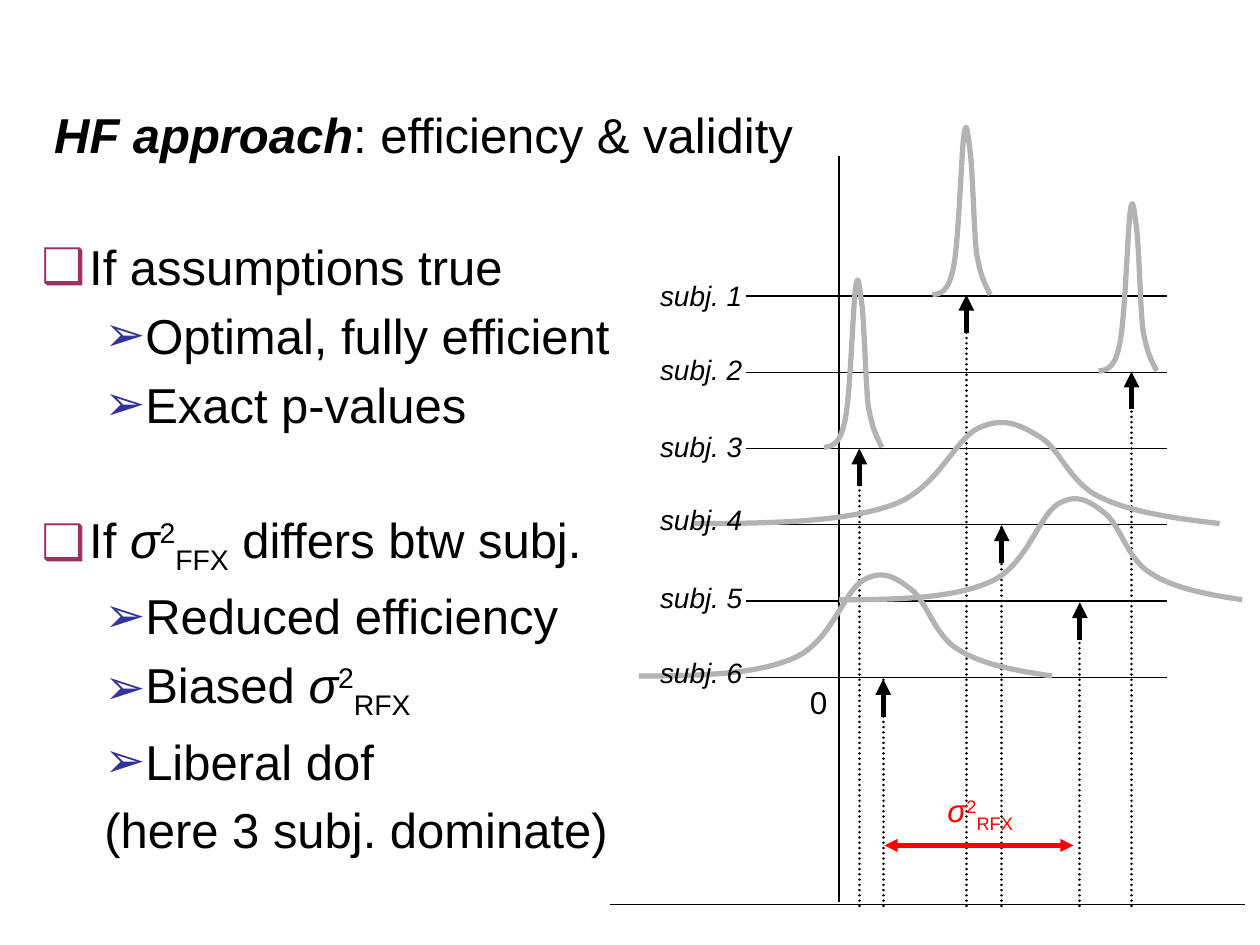
from dataclasses import dataclass
from typing import Optional

from lxml.etree import SubElement
from pptx import Presentation
from pptx.dml.color import RGBColor
from pptx.enum.dml import MSO_LINE
from pptx.enum.shapes import MSO_CONNECTOR
from pptx.enum.text import MSO_ANCHOR, PP_ALIGN
from pptx.oxml.ns import qn
from pptx.util import Inches, Pt

FONT = "Arial"
COLORS = {
    "text": "000000",
    "curve": "B3B3B3",
    "variance": "FF0000",
    "❑": "993366",
    "➢": "333399",
}

# Bezier points of the two densities: inches from the left end, height
NARROW = [
    (0, 0), (0.07, 0.01), (0.13, 0.02), (0.17, 0.23), (0.21, 0.44), (0.23, 1.11),
    (0.25, 1.26), (0.27, 1.41), (0.28, 1.29), (0.3, 1.14), (0.32, 0.99),
    (0.33, 0.53), (0.35, 0.34), (0.38, 0.15), (0.42, 0.08), (0.46, 0),
]
WIDE = [
    (0, 0), (0.59, 0), (1.18, 0.01), (1.56, 0.14), (1.94, 0.26), (2.07, 0.67),
    (2.27, 0.76), (2.47, 0.85), (2.6, 0.78), (2.75, 0.69), (2.91, 0.6),
    (2.99, 0.32), (3.23, 0.21), (3.47, 0.09), (3.83, 0.04), (4.18, 0),
]

FIRST_BASELINE, BASELINE_STEP = 2.35, 0.605
FIRST_ARROW, ARROW_STEP = 2.34, 0.61
AXIS_Y = 7.18


@dataclass
class Subject:
    name: str
    label_top: float
    estimate: float
    curve_left: float
    curve_width: float
    profile: list


@dataclass
class Piece:
    text: str
    bold: bool = False
    italic: bool = False
    baseline: int = 0


@dataclass
class BodyLine:
    pieces: list
    level: int = 1
    bullet: Optional[str] = "➢"
    space_before: float = 5.6


def sigma(subscript: str) -> list:
    return [Piece("σ", italic=True), Piece("2", baseline=30000),
            Piece(subscript, baseline=-25000)]


SUBJECTS = [
    Subject("subj. 1", 2.16, 7.67, 7.4, 0.46, NARROW),
    Subject("subj. 2", 2.75, 8.98, 8.72, 0.46, NARROW),
    Subject("subj. 3", 3.36, 6.82, 6.54, 0.46, NARROW),
    Subject("subj. 4", 3.94, 7.95, 5.5, 4.18, WIDE),
    Subject("subj. 5", 4.56, 8.57, 6.66, 3.2, WIDE),
    Subject("subj. 6", 5.15, 7.01, 5.07, 3.28, WIDE),
]
BODY = [
    BodyLine([Piece("If assumptions true")], 0, "❑", 0),
    BodyLine([Piece("Optimal, fully efficient")]),
    BodyLine([Piece("Exact p-values")]),
    BodyLine([Piece("If "), *sigma("FFX"), Piece(" differs btw subj.")], 0, "❑", 43.5),
    BodyLine([Piece("Reduced efficiency")]),
    BodyLine([Piece("Biased "), *sigma("RFX")]),
    BodyLine([Piece("Liberal dof")]),
    BodyLine([Piece("(here 3 subj. dominate)")], bullet=None),
]


def rgb(name: str) -> RGBColor:
    return RGBColor.from_string(COLORS[name])


def write_pieces(paragraph, pieces: list, size: float, color: str = "text") -> None:
    for piece in pieces:
        run = paragraph.add_run()
        run.text = piece.text
        run.font.name, run.font.size = FONT, Pt(size)
        run.font.bold, run.font.italic = piece.bold, piece.italic
        run.font.color.rgb = rgb(color)
        if piece.baseline:
            run._r.get_or_add_rPr().set("baseline", str(piece.baseline))


def add_text_frame(slide, left: float, top: float, width: float, height: float,
                   wrap: bool = True):
    shape = slide.shapes.add_textbox(Inches(left), Inches(top), Inches(width), Inches(height))
    shape.text_frame.word_wrap = wrap
    return shape.text_frame


def add_line(slide, start: tuple, end: tuple, width: float, color: str = "text",
             dotted: bool = False, arrows: tuple = ()) -> None:
    line = slide.shapes.add_connector(
        MSO_CONNECTOR.STRAIGHT, *(Inches(value) for value in (*start, *end)))
    line.line.width = Pt(width)
    line.line.color.rgb = rgb(color)
    outline = line.line._get_or_add_ln()
    if dotted:
        line.line.dash_style = MSO_LINE.ROUND_DOT
        outline.set("cap", "rnd")
    for end_name in arrows:
        SubElement(outline, qn(f"a:{end_name}"), type="triangle")
    SubElement(line._element.spPr, qn("a:effectLst"))


def add_density(slide, subject: Subject, baseline: float) -> None:
    scale = subject.curve_width / subject.profile[-1][0]
    points = [(Inches(subject.curve_left + x * scale), Inches(baseline - y))
              for x, y in subject.profile]
    builder = slide.shapes.build_freeform(*points[0])
    builder.add_line_segments(points[1:], close=False)
    shape = builder.convert_to_shape()
    # Every three points after the first make one Bezier segment
    segments = list(shape._element.iter(qn("a:lnTo")))
    outline = segments[0].getparent()
    for first in range(0, len(segments), 3):
        bezier = SubElement(outline, qn("a:cubicBezTo"))
        for segment in segments[first:first + 3]:
            bezier.append(segment[0])
            outline.remove(segment)
    shape.shadow.inherit = False
    shape.fill.background()
    shape.line.color.rgb = rgb("curve")
    shape.line.width = Pt(3)


def add_title(slide) -> None:
    title = slide.shapes.title
    title.left, title.top, title.width, title.height = map(Inches, (0.33, 0.63, 9, 0.87))
    title.text_frame.vertical_anchor = MSO_ANCHOR.MIDDLE
    paragraph = title.text_frame.paragraphs[0]
    paragraph.alignment = PP_ALIGN.LEFT
    write_pieces(paragraph, [Piece("HF approach", bold=True, italic=True),
                             Piece(": efficiency & validity")], 28)


def add_body(slide) -> None:
    frame = add_text_frame(slide, 0.23, 1.83, 9.22, 4.84)
    for index, line in enumerate(BODY):
        paragraph = frame.add_paragraph() if index else frame.paragraphs[0]
        paragraph.level = line.level
        margin, indent = ((0.38, -0.38), (0.81, -0.31))[line.level]
        properties = paragraph._p.get_or_add_pPr()
        properties.set("marL", str(Inches(margin)))
        properties.set("indent", str(Inches(indent)))
        if line.bullet:
            color = SubElement(properties, qn("a:buClr"))
            SubElement(color, qn("a:srgbClr"), val=COLORS[line.bullet])
            SubElement(properties, qn("a:buFont"), typeface=FONT)
            SubElement(properties, qn("a:buChar"), char=line.bullet)
        paragraph.space_before = Pt(line.space_before)
        write_pieces(paragraph, line.pieces, 28)


def add_diagram(slide) -> None:
    # Axes
    add_line(slide, (6.66, 1.24), (6.66, 7.16), 1.25)
    add_line(slide, (4.84, AXIS_Y), (9.88, AXIS_Y), 0.75)
    zero = add_text_frame(slide, 6.33, 5.37, 0.41, 0.4)
    write_pieces(zero.paragraphs[0], [Piece("0")], 18)

    # One baseline, estimate, density and label per subject
    for index, subject in enumerate(SUBJECTS):
        y = FIRST_BASELINE + index * BASELINE_STEP
        tip = FIRST_ARROW + index * ARROW_STEP
        x = subject.estimate
        add_line(slide, (5.92, y), (9.26, y), 0.75)
        add_line(slide, (x, AXIS_Y + 0.01), (x, y), 1.5, dotted=True)
        add_line(slide, (x, tip + 0.3), (x, tip), 3, arrows=("tailEnd",))
        add_density(slide, subject, y - 0.01)
    for subject in SUBJECTS:
        label = add_text_frame(slide, 5.14, subject.label_top, 1.18, 0.39)
        write_pieces(label.paragraphs[0], [Piece(subject.name, italic=True)], 16)

    # Between-subject variance
    variance = add_text_frame(slide, 7.42, 6.23, 0.78, 0.4, wrap=False)
    write_pieces(variance.paragraphs[0], sigma("RFX"), 18, "variance")
    add_line(slide, (7.02, 6.71), (8.52, 6.71), 2.5, "variance",
             arrows=("headEnd", "tailEnd"))


def main() -> None:
    presentation = Presentation()
    presentation.slide_width, presentation.slide_height = Inches(10), Inches(7.5)
    slide = presentation.slides.add_slide(presentation.slide_layouts[5])
    add_title(slide)
    add_diagram(slide)
    add_body(slide)
    presentation.save("out.pptx")


if __name__ == "__main__":
    main()
